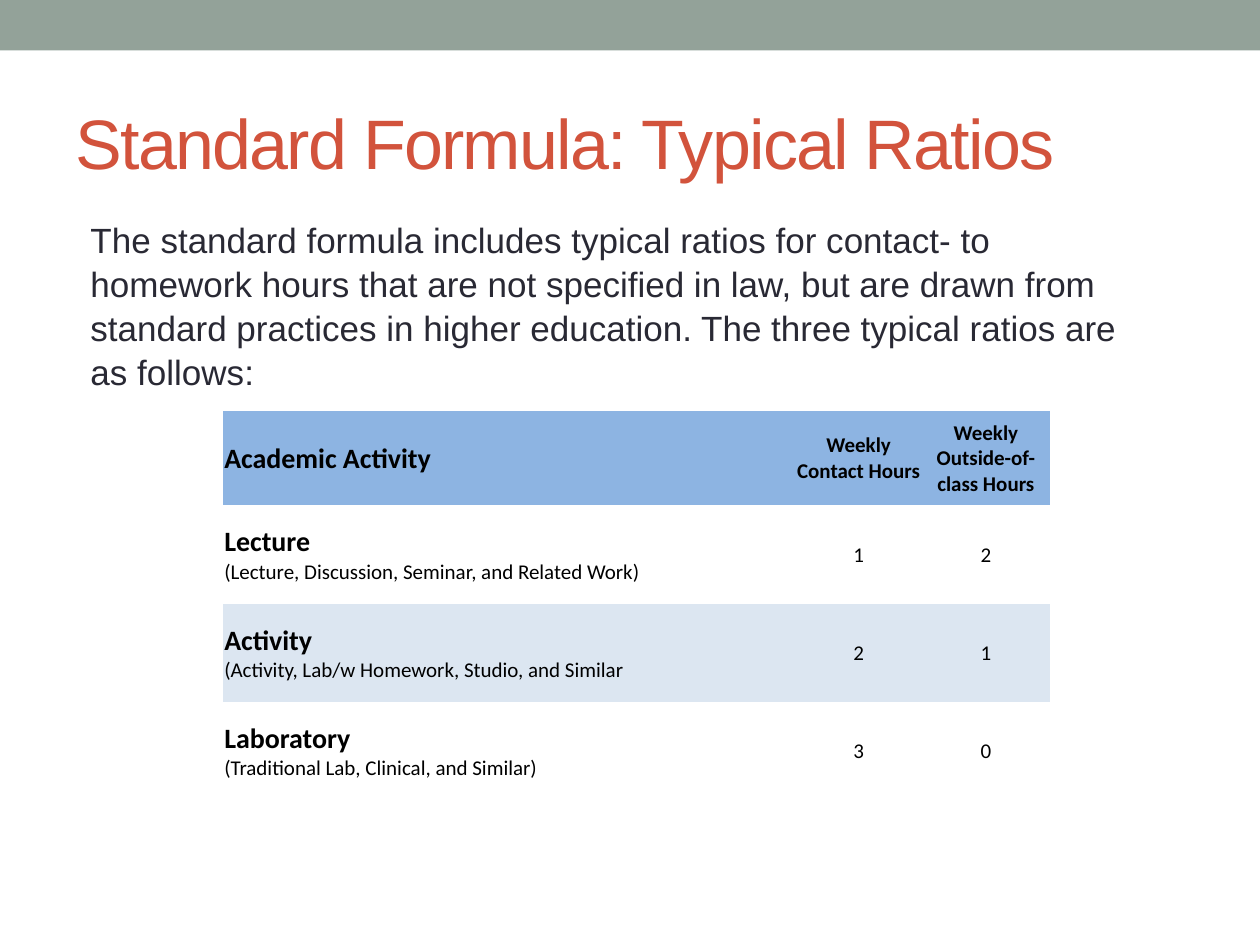
import dataclasses

import pptx
import pptx.dml.color
import pptx.enum.shapes
import pptx.enum.text
import pptx.util

Inches = pptx.util.Inches
Align = pptx.enum.text.PP_ALIGN
Anchor = pptx.enum.text.MSO_ANCHOR
NO_GRID_STYLE = "{2D5ABB26-0587-4C30-8999-92F81FD0307C}"


@dataclasses.dataclass(frozen=True)
class Theme:
    bar: str = "93A299"
    title: str = "D2533C"
    body: str = "292934"
    table_text: str = "000000"
    header_fill: str = "8DB4E2"
    band_fill: str = "DCE6F1"
    text_font: str = "Arial"
    table_font: str = "Calibri"
    title_size: int = 40
    body_size: int = 20
    label_size: int = 16
    cell_size: int = 12


def rgb(value):
    return pptx.dml.color.RGBColor.from_string(value)


def apply(target, formats):
    for name, value in formats.items():
        setattr(target, name, value)


class SlideBuilder:
    def __init__(self, slide, theme):
        self.slide = slide
        self.theme = theme

    def styled_run(self, paragraph, text, font, size, color, bold=False):
        run = paragraph.add_run()
        run.text = text
        apply(run.font, {"name": font, "size": pptx.util.Pt(size), "bold": bold})
        run.font.color.rgb = rgb(color)
        return run

    def bar(self, left, top, width, height):
        shape = self.slide.shapes.add_shape(
            pptx.enum.shapes.MSO_SHAPE.RECTANGLE,
            Inches(left), Inches(top), Inches(width), Inches(height))
        shape.shadow.inherit = False
        shape.fill.solid()
        shape.fill.fore_color.rgb = rgb(self.theme.bar)
        shape.line.fill.background()

    def title(self, text, left, top, width, height):
        shape = self.slide.shapes.title
        apply(shape, {"left": Inches(left), "top": Inches(top),
                      "width": Inches(width), "height": Inches(height)})
        shape.text_frame.vertical_anchor = Anchor.MIDDLE
        paragraph = shape.text_frame.paragraphs[0]
        paragraph.alignment = Align.LEFT
        run = self.styled_run(paragraph, text, self.theme.text_font,
                              self.theme.title_size, self.theme.title)
        run._r.get_or_add_rPr().set("spc", "-100")

    def body(self, text, left, top, width, height):
        shape = self.slide.shapes.add_textbox(
            Inches(left), Inches(top), Inches(width), Inches(height))
        shape.text_frame.word_wrap = True
        paragraph = shape.text_frame.paragraphs[0]
        paragraph.line_spacing = 1.05
        self.styled_run(paragraph, text, self.theme.text_font,
                        self.theme.body_size, self.theme.body)

    def cell(self, cell, lines, fill, alignment):
        inset = Inches(0.01)
        apply(cell, {"margin_left": inset, "margin_right": inset,
                     "margin_top": inset, "margin_bottom": 0,
                     "vertical_anchor": Anchor.MIDDLE})
        if fill:
            cell.fill.solid()
            cell.fill.fore_color.rgb = rgb(fill)
        else:
            cell.fill.background()
        paragraph = cell.text_frame.paragraphs[0]
        paragraph.alignment = alignment
        for index, (text, size, bold) in enumerate(lines):
            if index:
                paragraph.add_line_break()
            self.styled_run(paragraph, text, self.theme.table_font, size,
                            self.theme.table_text, bold)

    def table(self, rows, fills, left, top, widths, heights):
        table = self.slide.shapes.add_table(
            len(rows), len(widths), Inches(left), Inches(top),
            Inches(sum(widths)), Inches(sum(heights))).table
        apply(table, {"first_row": False, "horz_banding": False})
        table._tbl.tblPr[0].text = NO_GRID_STYLE
        for column, width in zip(table.columns, widths):
            column.width = Inches(width)
        for row, height, values, fill in zip(table.rows, heights, rows, fills):
            row.height = Inches(height)
            for index, (cell, lines) in enumerate(zip(row.cells, values)):
                self.cell(cell, lines, fill, Align.CENTER if index else Align.LEFT)


def activity_rows(theme):
    headings = ["Weekly Contact Hours", "Weekly Outside-of-class Hours"]
    activities = [
        ("Lecture", "(Lecture, Discussion, Seminar, and Related Work)", 1, 2),
        ("Activity", "(Activity, Lab/w Homework, Studio, and Similar", 2, 1),
        ("Laboratory", "(Traditional Lab, Clinical, and Similar)", 3, 0),
    ]
    rows = [[[("Academic Activity", theme.label_size, True)]]
            + [[(heading, theme.cell_size, True)] for heading in headings]]
    for name, detail, *hours in activities:
        label = [(name, theme.label_size, True), (detail, theme.cell_size, False)]
        rows.append([label] + [[(str(hour), theme.cell_size, False)] for hour in hours])
    return rows


def main():
    presentation = pptx.Presentation()
    apply(presentation, {"slide_width": Inches(10), "slide_height": Inches(7.5)})
    theme = Theme()
    builder = SlideBuilder(
        presentation.slides.add_slide(presentation.slide_layouts[5]), theme)
    builder.bar(0, 0, 10, 0.4)
    builder.title("Standard Formula: Typical Ratios", 0.5, 0.58, 9, 1.08)
    builder.body(
        "The standard formula includes typical ratios for contact- to homework "
        "hours that are not specified in law, but are drawn from standard "
        "practices in higher education. The three typical ratios are as follows:",
        0.62, 1.67, 8.57, 4.94)
    builder.table(activity_rows(theme),
                  [theme.header_fill, None, theme.band_fill, None],
                  1.77, 3.26, [4.54, 1.01, 1.01], [0.75] + [0.78] * 3)
    presentation.save("out.pptx")


if __name__ == "__main__":
    main()
